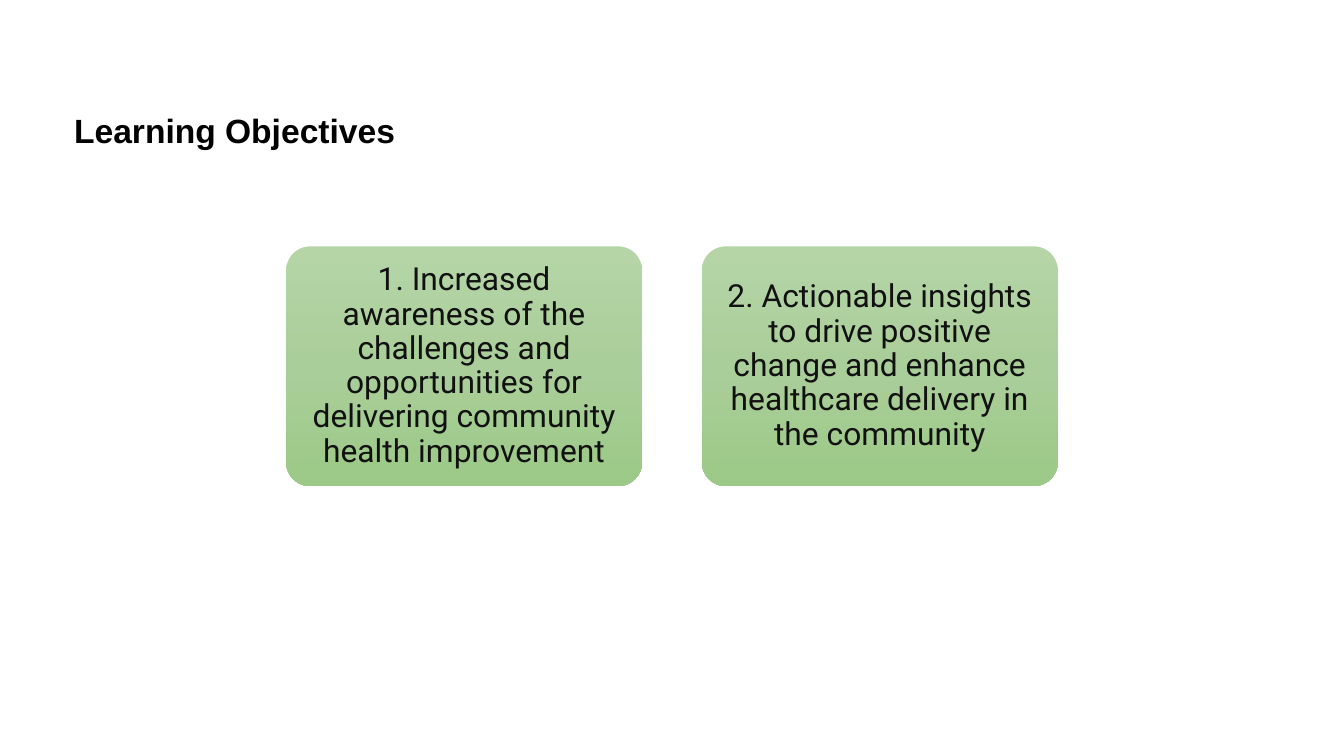
import copy

import pptx
import pptx.dml.color
import pptx.enum.shapes
import pptx.enum.text
import pptx.util

Pt = pptx.util.Pt
PP_ALIGN = pptx.enum.text.PP_ALIGN
MSO_ANCHOR = pptx.enum.text.MSO_ANCHOR

OBJECTIVES = [
    "1. Increased awareness of the challenges and opportunities for "
    "delivering community health improvement",
    "2. Actionable insights to drive positive change and enhance "
    "healthcare delivery in the community",
]
CARD_GRADIENT = [(0, "B5D5A7"), (0.5, "AACE9A"), (1, "9CC987")]


def color(hex_string):
    return pptx.dml.color.RGBColor.from_string(hex_string)


def style_font(font, name, size, hex_string, bold=False):
    font.name = name
    font.size = Pt(size)
    font.color.rgb = color(hex_string)
    font.bold = bold


def fill_downward(shape, gradient):
    """Fill the shape with the gradient's stops from top to bottom."""
    shape.fill.gradient()
    shape.fill.gradient_angle = 270
    stop_list = shape.fill._fill._gradFill.gsLst
    while len(stop_list) < len(gradient):
        stop_list.append(copy.deepcopy(stop_list[0]))
    for stop, (position, hex_string) in zip(shape.fill.gradient_stops, gradient):
        stop.position = position
        stop.color.rgb = color(hex_string)


def add_title(slide, text, left, top, width, height):
    title = slide.shapes.title
    title.left, title.top = Pt(left), Pt(top)
    title.width, title.height = Pt(width), Pt(height)
    frame = title.text_frame
    frame.text = text
    frame.word_wrap = True
    frame.auto_size = pptx.enum.text.MSO_AUTO_SIZE.NONE
    frame.vertical_anchor = MSO_ANCHOR.TOP
    paragraph = frame.paragraphs[0]
    paragraph.alignment = PP_ALIGN.LEFT
    style_font(paragraph.font, "Arial", 18, "000000", bold=True)


def add_card(slide, text, left, top, width, height):
    card = slide.shapes.add_shape(
        pptx.enum.shapes.MSO_SHAPE.ROUNDED_RECTANGLE,
        Pt(left), Pt(top), Pt(width), Pt(height))
    card.adjustments[0] = 0.1
    card.shadow.inherit = False
    card.line.fill.background()
    fill_downward(card, CARD_GRADIENT)
    frame = card.text_frame
    frame.word_wrap = True
    frame.vertical_anchor = MSO_ANCHOR.MIDDLE
    frame.margin_left = frame.margin_right = Pt(5)
    frame.margin_top = frame.margin_bottom = Pt(5)
    frame.text = text
    paragraph = frame.paragraphs[0]
    paragraph.alignment = PP_ALIGN.CENTER
    paragraph.line_spacing = 0.9
    style_font(paragraph.font, "Roboto", 17, "111111")


def add_card_row(slide, texts, left, top, width, height, gap):
    card_width = (width - gap * (len(texts) - 1)) / len(texts)
    for index, text in enumerate(texts):
        add_card(slide, text, left + index * (card_width + gap), top,
                 card_width, height)


def main():
    presentation = pptx.Presentation()
    presentation.slide_width = Pt(720)
    presentation.slide_height = Pt(405)
    slide = presentation.slides.add_slide(presentation.slide_layouts[5])
    add_title(slide, "Learning Objectives", 32.5, 55.5, 702, 29)
    add_card_row(slide, OBJECTIVES, 153.3, 132, 413.4, 128.4, gap=32)
    presentation.save("out.pptx")


if __name__ == "__main__":
    main()
